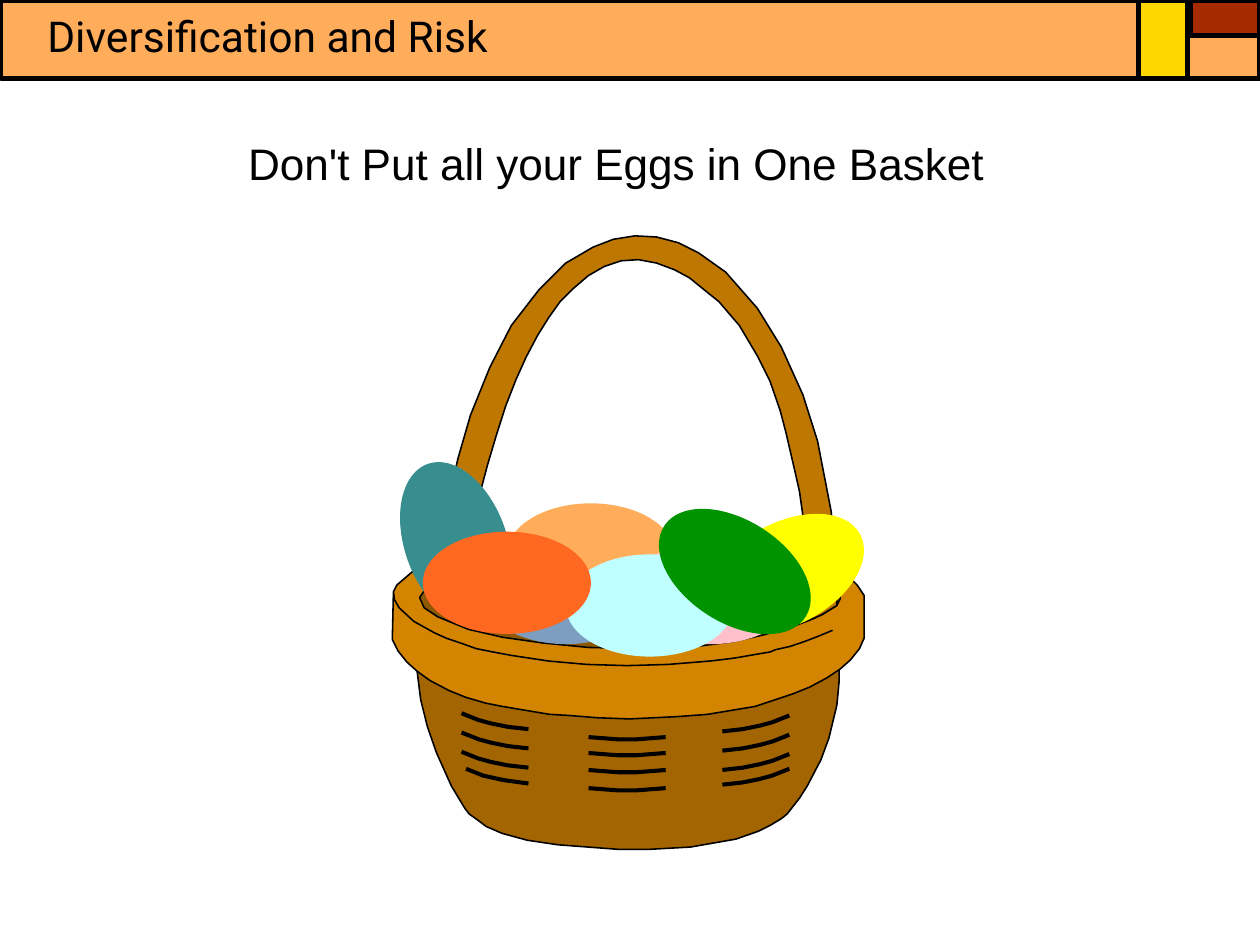
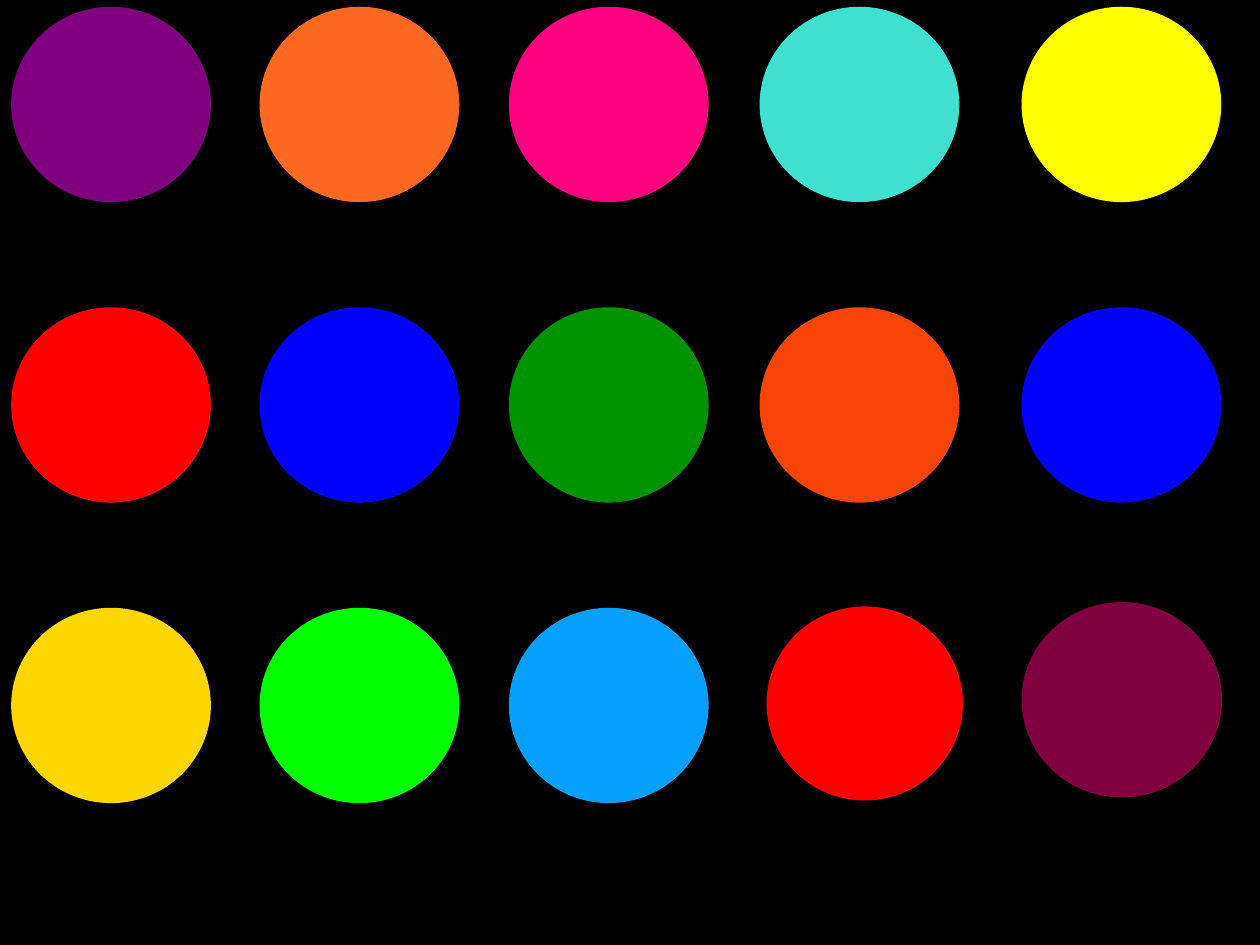
from dataclasses import dataclass

from pptx import Presentation
from pptx.dml.color import RGBColor
from pptx.enum import shapes as kinds, text as txt
from pptx.util import Pt


@dataclass(frozen=True)
class Theme:
    ink: str = "000000"
    paper: str = "FFFFFF"
    peach: str = "FFAD5B"
    brown: str = "A52A00"
    gold: str = "FFD700"
    orange: str = "FF6820"
    yellow: str = "FFFF00"
    green: str = "009300"
    red: str = "FF0000"
    blue: str = "0000FF"
    title_font: str = "Roboto"
    body_font: str = "Arial"
    title_size: float = 27
    body_size: float = 28
    heavy: float = 3
    strand: float = 2.58
    thin: float = 1


THEME = Theme()
SLIDE_W, SLIDE_H = 800, 600

# The basket is drawn on a grid; its points are grid units from the top left.
GRID_W = 450
BOWL = [
    (37, 385), (410, 386), (410, 401), (408, 422), (401, 451), (394, 470),
    (382, 493), (375, 504), (364, 518), (359, 522), (349, 528), (339, 533),
    (319, 540), (279, 547), (243, 549), (215, 549), (162, 545), (135, 541),
    (113, 535), (99, 529), (91, 523), (84, 518), (80, 513), (68, 493),
    (55, 464), (47, 441), (41, 417)]
RIM_OUTER = [
    (79, 289), (111, 283), (155, 279), (190, 277), (226, 277), (257, 278),
    (285, 279), (313, 281), (340, 285), (376, 292), (393, 296), (407, 301),
    (416, 306), (426, 316), (432, 325), (432, 363), (428, 372), (420, 382),
    (411, 390), (399, 398), (384, 406), (369, 412), (351, 418), (336, 423),
    (294, 430), (267, 432), (225, 434), (197, 433), (172, 431), (155, 430),
    (113, 423), (98, 420), (81, 415), (66, 409), (49, 400), (38, 392),
    (29, 384), (21, 374), (16, 364)]
RIM_LIP = [
    (17, 322), (18, 329), (22, 336), (35, 348), (44, 353), (53, 358),
    (64, 363), (76, 367), (90, 372), (105, 375), (121, 378), (154, 383),
    (188, 386), (223, 387), (259, 386), (296, 383), (313, 381), (320, 380),
    (337, 377), (349, 375), (354, 373), (367, 370), (379, 366), (392, 361),
    (404, 356)]
RIM = RIM_OUTER + RIM_LIP + RIM_LIP[-2::-1] + [(20, 316), (34, 304)]
HOLLOW = [
    (49, 315), (68, 308), (82, 304), (103, 299), (136, 293), (178, 289),
    (216, 288), (263, 288), (318, 294), (359, 303), (390, 312), (405, 318),
    (410, 322), (411, 328), (408, 334), (395, 342), (384, 347), (368, 353),
    (343, 360), (316, 366), (285, 370), (263, 372), (233, 372), (189, 371),
    (148, 367), (113, 362), (83, 355), (56, 344), (44, 336), (40, 327),
    (47, 317)]
HANDLE = [
    (55, 313), (56, 301), (67, 234), (74, 204), (85, 166), (102, 124),
    (121, 87), (145, 56), (169, 32), (193, 18), (211, 11), (230, 8),
    (249, 9), (268, 14), (286, 23), (310, 40), (338, 72), (359, 106),
    (378, 148), (391, 189), (403, 251), (406, 285), (408, 321), (408, 334),
    (395, 342), (386, 346), (385, 325), (384, 305), (380, 268), (375, 233),
    (370, 211), (363, 181), (358, 162), (349, 136), (338, 114), (322, 87),
    (304, 66), (294, 58), (278, 45), (265, 38), (249, 32), (233, 29),
    (218, 30), (203, 35), (189, 43), (175, 55), (164, 66), (154, 80),
    (144, 96), (134, 115), (125, 135), (116, 158), (108, 183), (100, 210),
    (92, 240), (85, 271), (79, 305)]
BASKET_PARTS = [(BOWL, "A36501"), (RIM, "D38401"),
                (HOLLOW, "8D5801"), (HANDLE, "BE7701")]

LEFT_STRAND = [(77, 0), (92, 6), (103, 9), (118, 12), (136, 14)]
SHORT_STRAND = [(81, 0), (96, 6), (114, 10), (136, 13)]
MIDDLE_STRAND = [(189, 0), (215, 2), (231, 2), (257, 0)]
RIGHT_STRAND = [(443 - x, y) for x, y in LEFT_STRAND]
WEAVE = [(LEFT_STRAND, (429, 446, 463)), (SHORT_STRAND, (478,)),
         (MIDDLE_STRAND, (450, 464, 479, 495)),
         (RIGHT_STRAND, (431, 448, 465, 478))]

EGG_W, EGG_H = 144, 86
EGGS = [  # left, top, rotation, colour
    (291, 263, 152, THEME.yellow), (97, 280, 0, "7D9EC0"),
    (119, 246, 0, THEME.peach), (225, 280, 0, "FFC0CB"),
    (171, 291, 0, "C0FFFF"), (0, 236, 70.4, "388E8E"),
    (246, 261, 32.8, THEME.green), (45, 271, 0, THEME.orange)]

DISC_W, DISC_H = 123.8, 121
DISC_COLUMNS = (0, 157.7, 316, 475.2, 641.5)
DISC_ROW_STEP = 190.8
DISC_COLOURS = [
    ("800080", THEME.orange, "FF0080", "40E0D0", THEME.yellow),
    (THEME.red, THEME.blue, THEME.green, "F84407", THEME.blue),
    (THEME.gold, "00FF00", "05A0FE", THEME.red, "800040")]
# (row, column): shift right, shift down, change of width, change of height
DISC_ADJUST = {(2, 3): (4.4, -0.8, -2.1, -0.8), (2, 4): (0, -3.6, 0.5, 0)}


def paint(shape, fill, line, width):
    shape.shadow.inherit = False
    if fill:
        shape.fill.solid()
        shape.fill.fore_color.rgb = RGBColor.from_string(fill)
    else:
        shape.fill.background()
    shape.line.color.rgb = RGBColor.from_string(line)
    shape.line.width = Pt(width)


def add_preset(slide, kind, box, fill, line):
    shape = slide.shapes.add_shape(kind, *map(Pt, box))
    paint(shape, fill, line, THEME.heavy)
    return shape


def add_oval(slide, box, colour):
    return add_preset(slide, kinds.MSO_SHAPE.OVAL, box, colour, colour)


def add_outline(slide, origin, unit, points, fill, width):
    """Draw grid points as a filled outline, or as an open stroke if fill is None."""
    builder = slide.shapes.build_freeform(*points[0], scale=Pt(unit))
    builder.add_line_segments(points[1:], close=fill is not None)
    paint(builder.convert_to_shape(*map(Pt, origin)), fill, THEME.ink, width)


def add_label(slide, box, words, font, size, align):
    frame = slide.shapes.add_textbox(*map(Pt, box)).text_frame
    frame.word_wrap = True
    paragraph = frame.paragraphs[0]
    paragraph.alignment = align
    run = paragraph.add_run()
    run.text = words
    run.font.name = font
    run.font.size = Pt(size)
    run.font.color.rgb = RGBColor.from_string(THEME.ink)


def new_slide(deck, background):
    slide = deck.slides.add_slide(deck.slide_layouts[6])
    slide.background.fill.solid()
    slide.background.fill.fore_color.rgb = RGBColor.from_string(background)
    return slide


def title_band(slide, box, title):
    left, top, width, height = box
    right = left + width
    tiles = [(box, THEME.peach),
             ((right - 44, top, 44, 22), THEME.brown),
             ((right - 76.6, top, 31, height), THEME.gold)]
    for tile, colour in tiles:
        add_preset(slide, kinds.MSO_SHAPE.RECTANGLE, tile, colour, THEME.ink)
    add_label(slide, (left + 22.3, top + 2.2, 418, 40), title,
              THEME.title_font, THEME.title_size, txt.PP_ALIGN.LEFT)


def basket(slide, box):
    left, top, width, _ = box
    unit = width / GRID_W
    for points, colour in BASKET_PARTS:
        add_outline(slide, (left, top), unit, points, colour, THEME.thin)
    for strand, tops in WEAVE:
        for strand_top in tops:
            points = [(x, y + strand_top) for x, y in strand]
            add_outline(slide, (left, top), unit, points, None, THEME.strand)
    for x, y, rotation, colour in EGGS:
        egg = add_oval(slide, (left + x * unit, top + y * unit,
                               EGG_W * unit, EGG_H * unit), colour)
        egg.rotation = rotation


def disc_grid(slide, box):
    left, top = box[:2]
    for row, colours in enumerate(DISC_COLOURS):
        for column, colour in enumerate(colours):
            dx, dy, dw, dh = DISC_ADJUST.get((row, column), (0, 0, 0, 0))
            add_oval(slide, (left + DISC_COLUMNS[column] + dx,
                             top + row * DISC_ROW_STEP + dy,
                             DISC_W + dw, DISC_H + dh), colour)


def basket_slide(deck):
    slide = new_slide(deck, THEME.paper)
    basket(slide, (237.6, 144, 324, 396))
    add_label(slide, (136, 82.8, 510, 67), "Don't Put all your Eggs in One Basket",
              THEME.body_font, THEME.body_size, txt.PP_ALIGN.CENTER)
    title_band(slide, (0.7, 0.7, 799, 49), "Diversification and Risk")


def disc_slide(deck):
    slide = new_slide(deck, THEME.ink)
    disc_grid(slide, (8.6, 5.8, 765.3, 502.6))


def main():
    deck = Presentation()
    deck.slide_width, deck.slide_height = Pt(SLIDE_W), Pt(SLIDE_H)
    basket_slide(deck)
    disc_slide(deck)
    deck.save("out.pptx")


if __name__ == "__main__":
    main()
